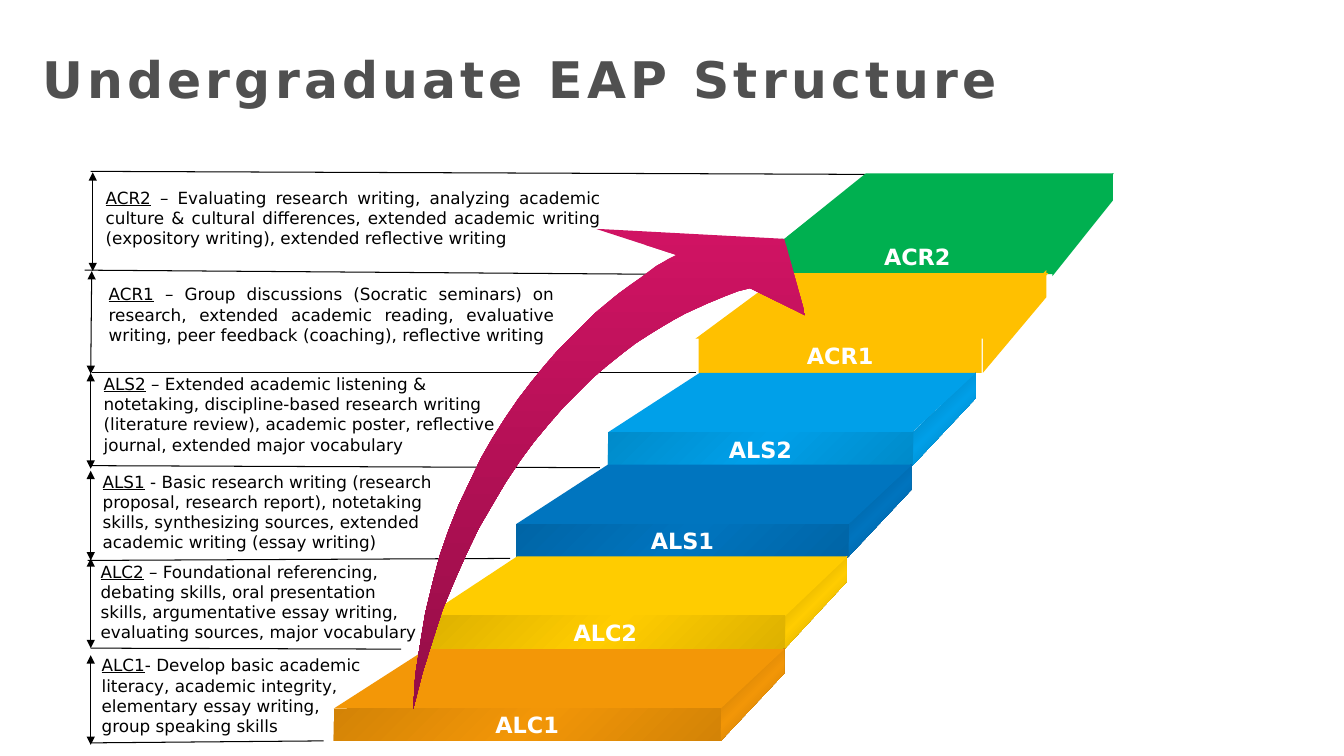
from dataclasses import dataclass
from typing import Any, NamedTuple

from pptx import Presentation
from pptx.dml.color import RGBColor
from pptx.enum.shapes import MSO_CONNECTOR, MSO_SHAPE
from pptx.enum.text import MSO_ANCHOR, MSO_AUTO_SIZE, PP_ALIGN
from pptx.oxml import parse_xml
from pptx.oxml.ns import qn
from pptx.slide import Slide
from pptx.util import Inches, Pt
from lxml.etree import SubElement

DRAWING = "http://schemas.openxmlformats.org/drawingml/2006/main"
FONT = "DejaVu Sans"
SLIDE_COLUMNS, SLIDE_ROWS = 133.33, 75
FRONT_SHADE, SIDE_SHADE = 72549, 46275


class Point(NamedTuple):
    column: float
    row: float


class Area(NamedTuple):
    left: float
    top: float
    width: float
    height: float


class Depth(NamedTuple):
    low: float
    corner: float
    bottom: float


class Side(NamedTuple):
    left: float
    right: float
    top: float
    depth: Depth


UPPER = Depth(2.7, 6.5, 10.2)
LOWER = Depth(2.5, 6, 9.2)


@dataclass
class Step:
    name: str
    description: list[str]
    color: str
    shaded: bool
    text_area: Area
    alignment: PP_ALIGN
    tread: list[Point]
    front: Area
    side: Side
    rule: tuple[Point, Point]
    span_arrow: tuple[Point, Point]


STEPS = [
    Step("ACR2", [" – Evaluating research writing, analyzing academic culture & cultural differences, extended academic writing (expository writing), extended reflective writing"],
         "00B050", False, Area(9.5, 18.1, 51.1, 7.1), PP_ALIGN.JUSTIFY,
         [Point(104.9, 23.7), Point(77.8, 23.7), Point(85.9, 17.2), Point(110.5, 17.2)],
         Area(77.5, 23.7, 27, 3.5), Side(104.4, 110.4, 17.2, UPPER),
         (Point(85.8, 17.3), Point(9, 17)), (Point(9.2, 17.1), Point(9.2, 26.9))),
    Step("ACR1", [" – Group discussions (Socratic seminars) on research, extended academic reading, evaluative writing, peer feedback (coaching), reflective writing"],
         "FFC000", False, Area(9.8, 27.7, 46.2, 7.1), PP_ALIGN.JUSTIFY,
         [Point(97.9, 33.6), Point(69, 33.6), Point(77.8, 27.1), Point(104, 27.1)],
         Area(69.3, 33.5, 28.1, 3.5), Side(97.5, 103.8, 26.8, UPPER),
         (Point(77.6, 27.3), Point(8.4, 26.8)), (Point(9.1, 26.9), Point(9, 37.1))),
    Step("ALS2", [" – Extended academic listening & notetaking, discipline-based research writing (literature review), academic poster, reflective journal, extended major vocabulary"],
         "00A0E9", True, Area(9.3, 36.6, 41.3, 9.1), PP_ALIGN.LEFT,
         [Point(90.5, 42.9), Point(60.3, 42.9), Point(69.4, 37), Point(96.8, 37)],
         Area(60.3, 42.9, 30.3, 3.3), Side(90.5, 96.8, 37, LOWER),
         (Point(69, 37), Point(9.1, 37)), (Point(9, 37), Point(9, 46.5))),
    Step("ALS1", [" - Basic research writing (research proposal, research report), notetaking skills, synthesizing sources, extended academic writing (essay writing)"],
         "0075BF", True, Area(9.2, 46.3, 35.8, 9.1), PP_ALIGN.LEFT,
         [Point(84.2, 52), Point(51.2, 52), Point(60.3, 46.1), Point(90.5, 46.1)],
         Area(51.2, 52, 33, 3.3), Side(84.1, 90.4, 46.1, LOWER),
         (Point(59.5, 46.4), Point(9, 46.2)), (Point(9, 46.7), Point(9, 55.6))),
    Step("ALC2", [" – Foundational referencing, debating skills, oral presentation skills, argumentative essay writing,",
                  "evaluating sources, major vocabulary"],
         "FFCC00", True, Area(9, 55.2, 33.7, 9.1), PP_ALIGN.LEFT,
         [Point(77.8, 61.2), Point(42.2, 61.2), Point(51.3, 55.2), Point(84.1, 55.2)],
         Area(42.2, 61.1, 35.7, 3.3), Side(77.8, 84, 55.2, LOWER),
         (Point(50.6, 55.4), Point(8.7, 55.6)), (Point(9, 55.4), Point(9, 64.3))),
    Step("ALC1", ["- Develop basic academic literacy, academic integrity, elementary essay writing, group speaking skills"],
         "F39707", True, Area(9.1, 64.5, 27.8, 9.1), PP_ALIGN.LEFT,
         [Point(71.5, 70.3), Point(33.1, 70.3), Point(42.3, 64.4), Point(77.8, 64.4)],
         Area(33.1, 70.3, 38.4, 3.2), Side(71.5, 77.8, 64.3, LOWER),
         (Point(39.8, 64.4), Point(9, 64.3)), (Point(9, 65), Point(9, 73.9))),
]
BASE_RULE = (Point(32.1, 73.5), Point(9.1, 73.7))

GROWTH_OUTLINE = [Point(*pair) for pair in [
    (41, 70.3), (41.2, 67), (41.7, 63.8), (42.2, 60.8), (42.9, 57.9), (43.6, 55.2),
    (44.5, 52.6), (45.5, 50.1), (46.6, 47.8), (47.7, 45.5), (48.9, 43.4), (50.1, 41.5),
    (51.4, 39.6), (52.7, 37.9), (54, 36.3), (55.3, 34.8), (56.6, 33.5), (57.9, 32.2),
    (59.1, 31), (60.3, 30), (61.4, 29.1), (62.5, 28.3), (63.5, 27.6), (64.3, 27),
    (65.1, 26.4), (65.8, 26), (66.3, 25.7), (67.1, 25.3), (59.1, 22.7), (77.8, 23.7),
    (79.9, 31.3), (74.4, 28.6), (73.2, 28.9), (71.9, 29.4), (70.2, 30.1), (68, 31.1),
    (66.9, 31.7), (65.7, 32.4), (64.4, 33.2), (63, 34.1), (61.7, 35.1), (60.2, 36.3),
    (58.8, 37.5), (57.4, 38.9), (55.9, 40.4), (54.5, 42), (53, 43.8), (51.6, 45.7),
    (50.2, 47.8), (48.9, 50), (47.5, 52.4), (46.3, 54.9), (45.1, 57.6), (43.9, 60.5),
    (42.9, 63.6), (41.9, 66.8)]]


def grid(count: float) -> int:
    return Inches(count / 10)


def color_of(code: str) -> RGBColor:
    return RGBColor.from_string(code)


def apply(target: Any, values: dict[str, Any]) -> None:
    for name, value in values.items():
        setattr(target, name, value)


def place(area: Area) -> list[int]:
    return [grid(length) for length in area]


def paint(shape: Any, color: str) -> None:
    shape.shadow.inherit = False
    shape.line.fill.background()
    shape.fill.solid()
    shape.fill.fore_color.rgb = color_of(color)


def shade(shape: Any, color: str, shades: list[int], angle: int) -> None:
    last = len(shades) - 1
    stops = "".join(
        f'<a:gs pos="{100000 * index // last}"><a:srgbClr val="{color}"><a:shade val="{amount}"/></a:srgbClr></a:gs>'
        for index, amount in enumerate(shades))
    gradient = parse_xml(f'<a:gradFill xmlns:a="{DRAWING}" rotWithShape="1"><a:gsLst>{stops}</a:gsLst>'
                         f'<a:lin ang="{angle * 60000}" scaled="0"/></a:gradFill>')
    properties = shape._element.spPr
    properties.replace(properties.find(qn("a:solidFill")), gradient)


def write(para: Any, text: str, size: float, color: str, **values: Any) -> Any:
    span = para.add_run()
    span.text = text
    apply(span.font, {"name": FONT, "size": Pt(size), **values})
    span.font.color.rgb = color_of(color)
    return span


def draw_outline(page: Slide, points: list[Point], color: str) -> Any:
    corners = [(grid(point.column), grid(point.row)) for point in points]
    builder = page.shapes.build_freeform(*corners[0])
    builder.add_line_segments(corners[1:], close=True)
    shape = builder.convert_to_shape()
    paint(shape, color)
    return shape


def draw_line(page: Slide, ends: tuple[Point, Point], arrows: bool = False) -> None:
    start, end = ends
    line = page.shapes.add_connector(MSO_CONNECTOR.STRAIGHT, grid(start.column), grid(start.row),
                                     grid(end.column), grid(end.row))
    line.line.width = Pt(0.75)
    line.line.color.rgb = color_of("000000")
    if arrows:
        for tag in ("a:headEnd", "a:tailEnd"):
            SubElement(line.line._get_or_add_ln(), qn(tag), type="triangle")
    SubElement(line._element.spPr, qn("a:effectLst"))


def draw_step(page: Slide, step: Step) -> None:
    left, right, top, depth = step.side
    side = draw_outline(page, [Point(right, top + depth.low), Point(left, top + depth.bottom),
                               Point(left, top + depth.corner), Point(right, top)], step.color)
    draw_outline(page, step.tread, step.color)
    front = page.shapes.add_shape(MSO_SHAPE.RECTANGLE, *place(step.front))
    paint(front, step.color)
    if step.shaded:
        shade(side, step.color, [SIDE_SHADE, 100000, SIDE_SHADE], 45)
        shade(front, step.color, [FRONT_SHADE, 100000, FRONT_SHADE], 45)
    apply(front.text_frame, {"word_wrap": False, "vertical_anchor": MSO_ANCHOR.MIDDLE})
    para = front.text_frame.paragraphs[0]
    para.alignment = PP_ALIGN.CENTER
    write(para, step.name, 16, "FFFFFF", bold=True)


def draw_description(page: Slide, step: Step) -> None:
    box = page.shapes.add_textbox(*place(step.text_area))
    apply(box.text_frame, {"word_wrap": True, "auto_size": MSO_AUTO_SIZE.SHAPE_TO_FIT_TEXT})
    for index, text in enumerate(step.description):
        para = box.text_frame.add_paragraph() if index else box.text_frame.paragraphs[0]
        para.alignment = step.alignment
        if index == 0:
            write(para, step.name, 12, "000000", underline=True)
        write(para, text, 12, "000000", underline=False)


def draw_title(page: Slide) -> None:
    title = page.shapes.title
    apply(title, dict(zip(("left", "top", "width", "height"), place(Area(3.2, 3.9, 120, 7.7)))))
    apply(title.text_frame, {"word_wrap": True, "auto_size": MSO_AUTO_SIZE.NONE,
                             "vertical_anchor": MSO_ANCHOR.MIDDLE})
    para = title.text_frame.paragraphs[0]
    apply(para, {"alignment": PP_ALIGN.LEFT, "space_before": Pt(0)})
    span = write(para, "Undergraduate EAP Structure", 36, "505050", bold=True)
    span.font._element.set("spc", "300")


def main() -> None:
    deck = Presentation()
    apply(deck, {"slide_width": grid(SLIDE_COLUMNS), "slide_height": grid(SLIDE_ROWS)})
    page = deck.slides.add_slide(deck.slide_layouts[5])
    draw_title(page)
    for rule in [*(step.rule for step in STEPS), BASE_RULE]:
        draw_line(page, rule)
    for step in STEPS:
        draw_step(page, step)
    growth = draw_outline(page, GROWTH_OUTLINE, "D11364")
    shade(growth, "D11364", [100000, SIDE_SHADE], 90)
    for step in STEPS:
        draw_line(page, step.span_arrow, arrows=True)
        draw_description(page, step)
    deck.save("out.pptx")


if __name__ == "__main__":
    main()
